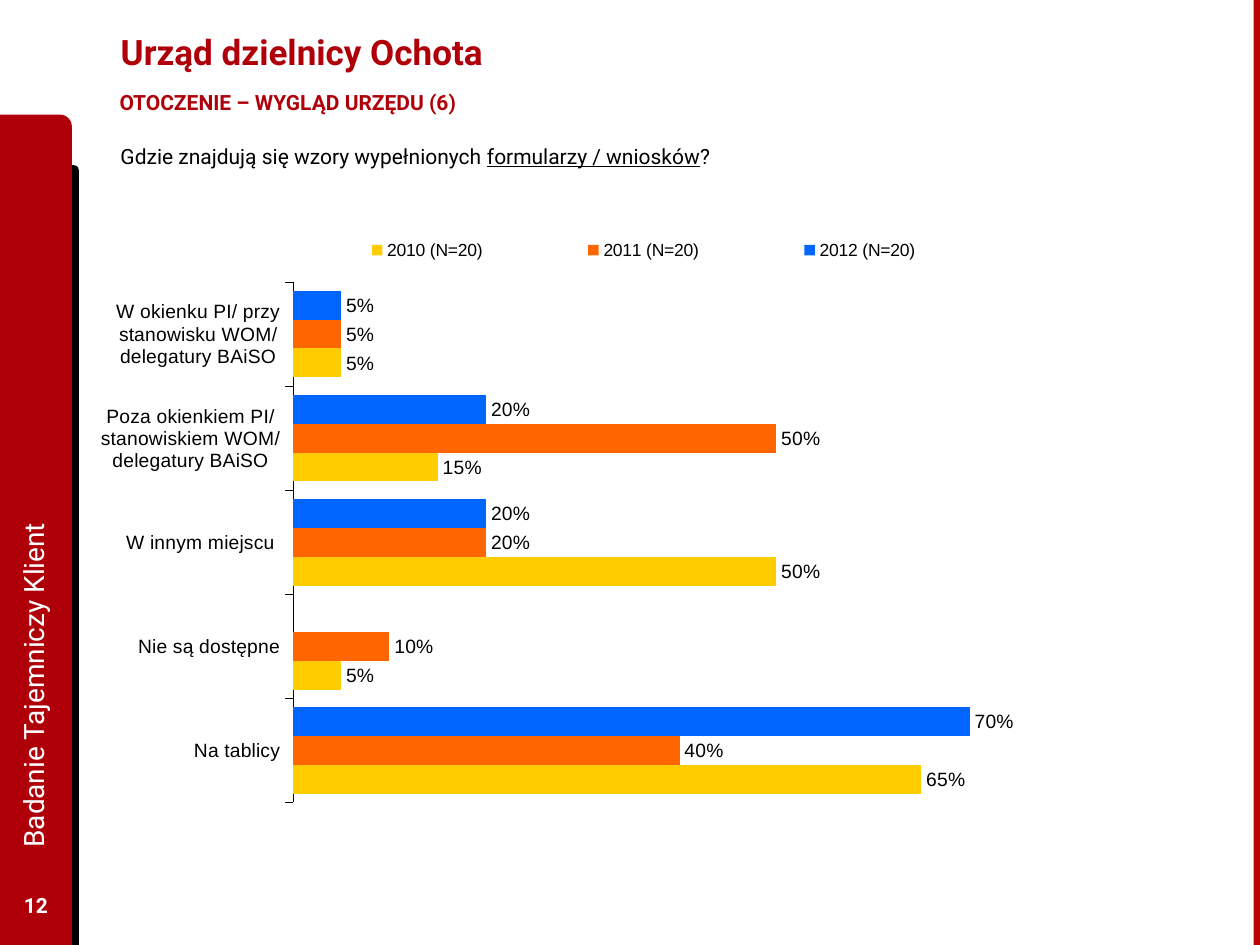
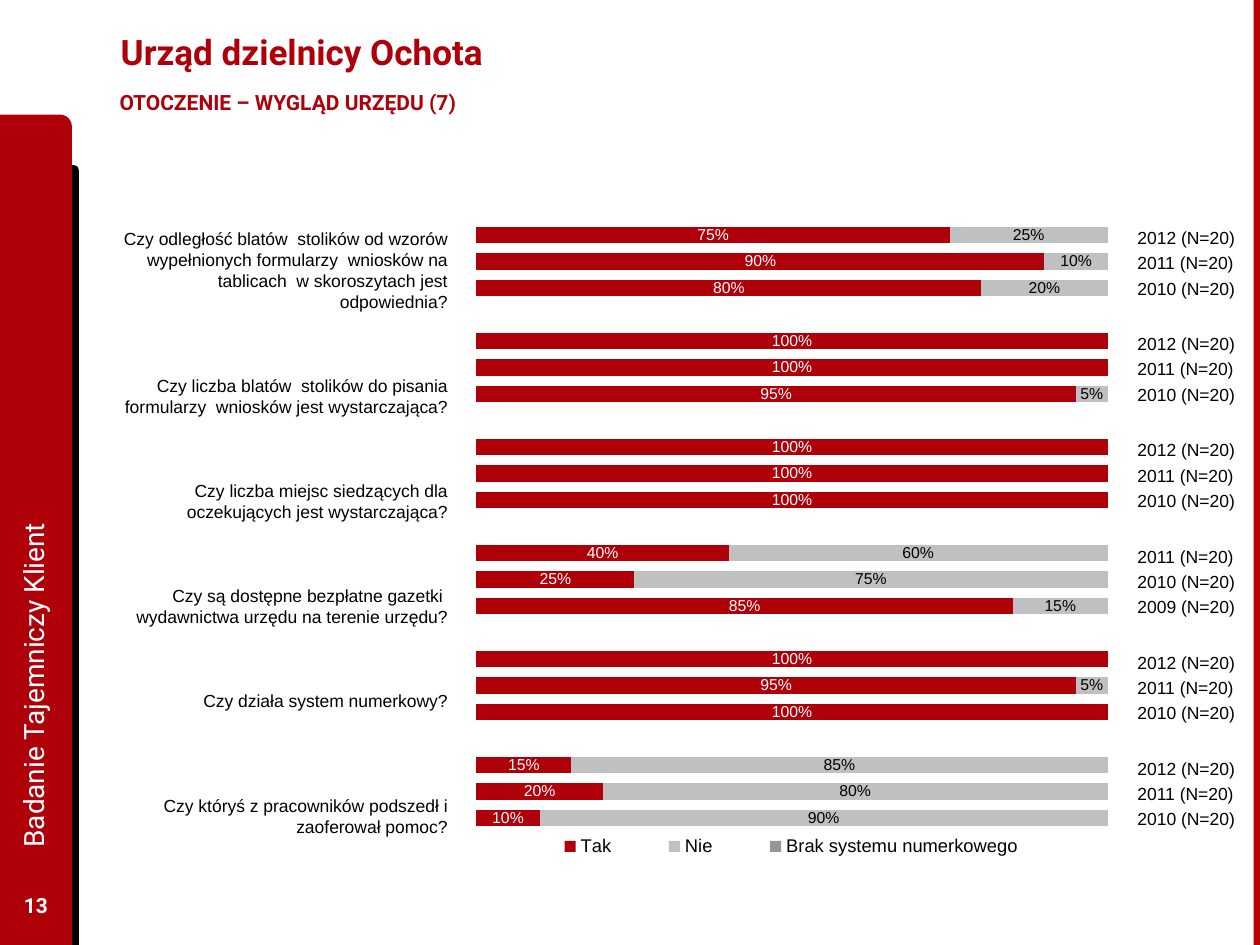
from lxml import etree
from pptx import Presentation
from pptx.chart.data import CategoryChartData
from pptx.dml.color import RGBColor
from pptx.enum.chart import XL_CHART_TYPE as ChartType
from pptx.enum.chart import XL_LABEL_POSITION as LabelPosition
from pptx.enum.chart import XL_LEGEND_POSITION as LegendPosition
from pptx.enum.chart import XL_TICK_LABEL_POSITION as TickLabels
from pptx.enum.chart import XL_TICK_MARK as TickMark
from pptx.enum.shapes import MSO_SHAPE as Shape
from pptx.enum.text import MSO_ANCHOR as Anchor
from pptx.enum.text import PP_ALIGN as Align
from pptx.oxml.ns import qn
from pptx.util import Cm, Pt

RED = RGBColor(0xAF, 0x00, 0x0A)
EDGE_RED = RGBColor(0xBD, 0x00, 0x00)
BLACK = RGBColor(0x00, 0x00, 0x00)
WHITE = RGBColor(0xFF, 0xFF, 0xFF)
BLUE = RGBColor(0x00, 0x66, 0xFF)
ORANGE = RGBColor(0xFF, 0x66, 0x00)
YELLOW = RGBColor(0xFF, 0xCC, 0x00)
SILVER = RGBColor(0xC0, 0xC0, 0xC0)
GREY = RGBColor(0x96, 0x96, 0x96)

TITLE = {"name": "Roboto", "size": Pt(20), "bold": True, "color": RED}
SUBTITLE = {**TITLE, "size": Pt(12)}
PAGE_NUMBER = {**SUBTITLE, "color": WHITE}
SIDE_TITLE = {"name": "Roboto", "size": Pt(16), "color": WHITE}
QUESTION = {"name": "Roboto", "size": Pt(12), "color": BLACK}
BODY = {"name": "Arial", "size": Pt(10), "color": BLACK}
AXIS = {**BODY, "size": Pt(11)}

# Shape, left, top, width, height (cm), colour
BANDS = [
    (Shape.ROUND_1_RECTANGLE, 0.99, 3.33, 0.6, 15.72, BLACK),
    (Shape.ROUND_1_RECTANGLE, 0, 2.31, 1.45, 16.74, RED),
    (Shape.RECTANGLE, 25.27, 0, 0.13, 19.05, EDGE_RED),
]


def apply_format(font, values):
    for name, value in values.items():
        if name == "color":
            font.color.rgb = value
        else:
            setattr(font, name, value)


def add_text(page, place, paragraphs, values, align=Align.LEFT, anchor=Anchor.TOP):
    """Add a text box; place is left, top, width, height in cm."""
    box = page.shapes.add_textbox(*map(Cm, place))
    frame = box.text_frame
    frame.word_wrap = True
    frame.vertical_anchor = anchor
    for number, text in enumerate(paragraphs):
        para = frame.add_paragraph() if number else frame.paragraphs[0]
        para.alignment = align
        span = para.add_run()
        span.text = text
        apply_format(span.font, values)
    return box


deck = Presentation()
deck.slide_width, deck.slide_height = Cm(25.4), Cm(19.05)

# Shared frame of both slides
pages = []
for number, part in ((12, 6), (13, 7)):
    page = deck.slides.add_slide(deck.slide_layouts[5])
    pages.append(page)
    for kind, left, top, width, height, colour in BANDS:
        band = page.shapes.add_shape(kind, Cm(left), Cm(top), Cm(width), Cm(height))
        band.shadow.inherit = False
        band.fill.solid()
        band.fill.fore_color.rgb = colour
        band.line.fill.background()

    title = page.shapes.title
    title.left, title.top, title.width, title.height = map(Cm, (2.18, 0.13, 19.74, 1.83))
    title.text_frame.text = "Urząd dzielnicy Ochota"
    title.text_frame.vertical_anchor = Anchor.MIDDLE
    title.text_frame.paragraphs[0].alignment = Align.LEFT
    apply_format(title.text_frame.paragraphs[0].runs[0].font, TITLE)

    subtitle = add_text(page, (1.9, 1.68, 9.78, 0.84),
                        [f"OTOCZENIE – WYGLĄD URZĘDU ({part})"], SUBTITLE)
    subtitle.text_frame.margin_left = subtitle.text_frame.margin_right = Cm(0.51)
    add_text(page, (0, 17.73, 1.45, 1.02), [str(number)], PAGE_NUMBER,
             Align.CENTER, Anchor.MIDDLE)
    side_title = add_text(page, (-6.65, 9.37, 14.63, 1.3), ["Badanie Tajemniczy Klient"],
                          SIDE_TITLE, anchor=Anchor.MIDDLE)
    side_title.rotation = 270

forms_page, service_page = pages

# Question above the first chart
question = add_text(forms_page, (2.18, 2.77, 16.43, 0.76),
                    ["Gdzie znajdują się wzory wypełnionych "], QUESTION)
for text, underline in (("formularzy / wniosków", True), ("?", False)):
    span = question.text_frame.paragraphs[0].add_run()
    span.text = text
    apply_format(span.font, {**QUESTION, "underline": underline})

# Both charts; plot and legend areas are x, y, width, height as shares of the chart
charts = [
    {
        "page": forms_page,
        "place": (2.03, 4.7, 23.04, 11.48),
        "type": ChartType.BAR_CLUSTERED,
        "categories": [
            "W okienku PI/ przy stanowisku WOM/ delegatury BAiSO",
            "Poza okienkiem PI/ stanowiskiem WOM/ delegatury BAiSO",
            "W innym miejscu ",
            "Nie są dostępne",
            "Na tablicy",
        ],
        "series": [
            ("2012 (N=20)", BLUE, BLACK, [5, 20, 20, None, 70]),
            ("2011 (N=20)", ORANGE, BLACK, [5, 50, 20, 10, 40]),
            ("2010 (N=20)", YELLOW, BLACK, [5, 15, 50, 5, 65]),
        ],
        "maximum": 0.8,
        "overlap": 0,
        "label_size": Pt(11),
        "label_position": LabelPosition.OUTSIDE_END,
        "legend_position": LegendPosition.TOP,
        "legend_size": Pt(10),
        "plot_area": (0.168, 0.089, 0.677, 0.914),
        "legend_area": (0.15, 0, 0.65, 0.06),
    },
    {
        "page": service_page,
        "place": (9.58, 3.99, 12.75, 13.51),
        "type": ChartType.BAR_STACKED,
        "categories": [str(row) for row in range(1, 24)],
        "series": [
            ("Tak", RED, WHITE,
             [75, 90, 80, None, 100, 100, 95, None, 100, 100, 100, None,
              40, 25, 85, None, 100, 95, 100, None, 15, 20, 10]),
            ("Nie", SILVER, BLACK,
             [25, 10, 20, None, None, None, 5, None, None, None, None, None,
              60, 75, 15, None, None, 5, None, None, 85, 80, 90]),
            ("Brak systemu numerkowego", GREY, BLACK, [None] * 23),
        ],
        "maximum": 1,
        "overlap": 100,
        "label_size": Pt(9),
        "label_position": LabelPosition.CENTER,
        "legend_position": LegendPosition.RIGHT,
        "legend_size": Pt(10.5),
        "plot_area": (0.002, 0.036, 0.998, 0.909),
        "legend_area": (0.06, 0.94, 0.88, 0.055),
    },
]

for setup in charts:
    data = CategoryChartData(number_format="0%")
    data.categories = setup["categories"]
    for name, colour, label_colour, percents in setup["series"]:
        data.add_series(name, [None if p is None else p / 100 for p in percents])
    chart = setup["page"].shapes.add_chart(
        setup["type"], *map(Cm, setup["place"]), data).chart
    chart.has_title = False
    apply_format(chart.font, AXIS)

    plot = chart.plots[0]
    plot.gap_width = 60
    plot.overlap = setup["overlap"]
    plot.vary_by_categories = False
    for series, (name, colour, label_colour, percents) in zip(plot.series, setup["series"]):
        series.format.fill.solid()
        series.format.fill.fore_color.rgb = colour
        labels = series.data_labels
        labels.show_value = True
        labels.number_format = "0%"
        labels.number_format_is_linked = False
        labels.position = setup["label_position"]
        apply_format(labels.font, {**BODY, "size": setup["label_size"], "color": label_colour})

    values = chart.value_axis
    values.minimum_scale, values.maximum_scale = 0, setup["maximum"]
    values.has_major_gridlines = False
    values.visible = False
    rows = chart.category_axis
    rows.reverse_order = True
    rows.visible = setup["page"] is forms_page
    rows.major_tick_mark = TickMark.OUTSIDE
    rows.tick_label_position = TickLabels.LOW
    rows.format.line.color.rgb = BLACK
    rows.format.line.width = Pt(0.25)
    apply_format(rows.tick_labels.font, AXIS)

    chart.has_legend = True
    chart.legend.position = setup["legend_position"]
    chart.legend.include_in_layout = False
    apply_format(chart.legend.font, {**BODY, "size": setup["legend_size"]})

    for parent, index, area in (
        (chart._chartSpace.chart.plotArea, 0, setup["plot_area"]),
        (chart.legend._element, 1, setup["legend_area"]),
    ):
        for old_layout in parent.findall(qn("c:layout")):
            parent.remove(old_layout)
        layout = etree.Element(qn("c:layout"))
        manual = etree.SubElement(layout, qn("c:manualLayout"))
        if index == 0:
            etree.SubElement(manual, qn("c:layoutTarget"), val="inner")
        for mode in ("xMode", "yMode"):
            etree.SubElement(manual, qn(f"c:{mode}"), val="edge")
        for side, share in zip("xywh", area):
            etree.SubElement(manual, qn(f"c:{side}"), val=str(share))
        parent.insert(index, layout)

# Questions left of the second chart, with the space before each
questions = [
    ("Czy odległość blatów  stolików od wzorów wypełnionych formularzy  wniosków "
     "na tablicach  w skoroszytach jest odpowiednia?", 0),
    ("Czy liczba blatów  stolików do pisania formularzy  wniosków jest wystarczająca?", 36),
    ("Czy liczba miejsc siedzących dla oczekujących jest wystarczająca?", 36),
    ("Czy są dostępne bezpłatne gazetki  wydawnictwa urzędu na terenie urzędu?", 36),
    ("Czy działa system numerkowy?", 36),
    ("Czy któryś z pracowników podszedł i zaoferował pomoc?", 48),
]
question_box = add_text(service_page, (1.9, 4.47, 7.37, 12.65),
                        [text for text, space in questions], BODY, Align.RIGHT)
question_box.fill.solid()
question_box.fill.fore_color.rgb = WHITE
for para, (text, space) in zip(question_box.text_frame.paragraphs, questions):
    para.space_before = Pt(space)

# Survey years right of the bars, one box per question
for group, latest in enumerate((2012, 2012, 2012, 2011, 2012, 2012)):
    years = [f"{latest - back} (N=20)" for back in range(3)]
    year_box = add_text(service_page, (22.68, 4.37 + 2.14 * group, 2.7, 2.31), years, BODY)
    for para in year_box.text_frame.paragraphs:
        para.line_spacing = 1.2

deck.save("out.pptx")
